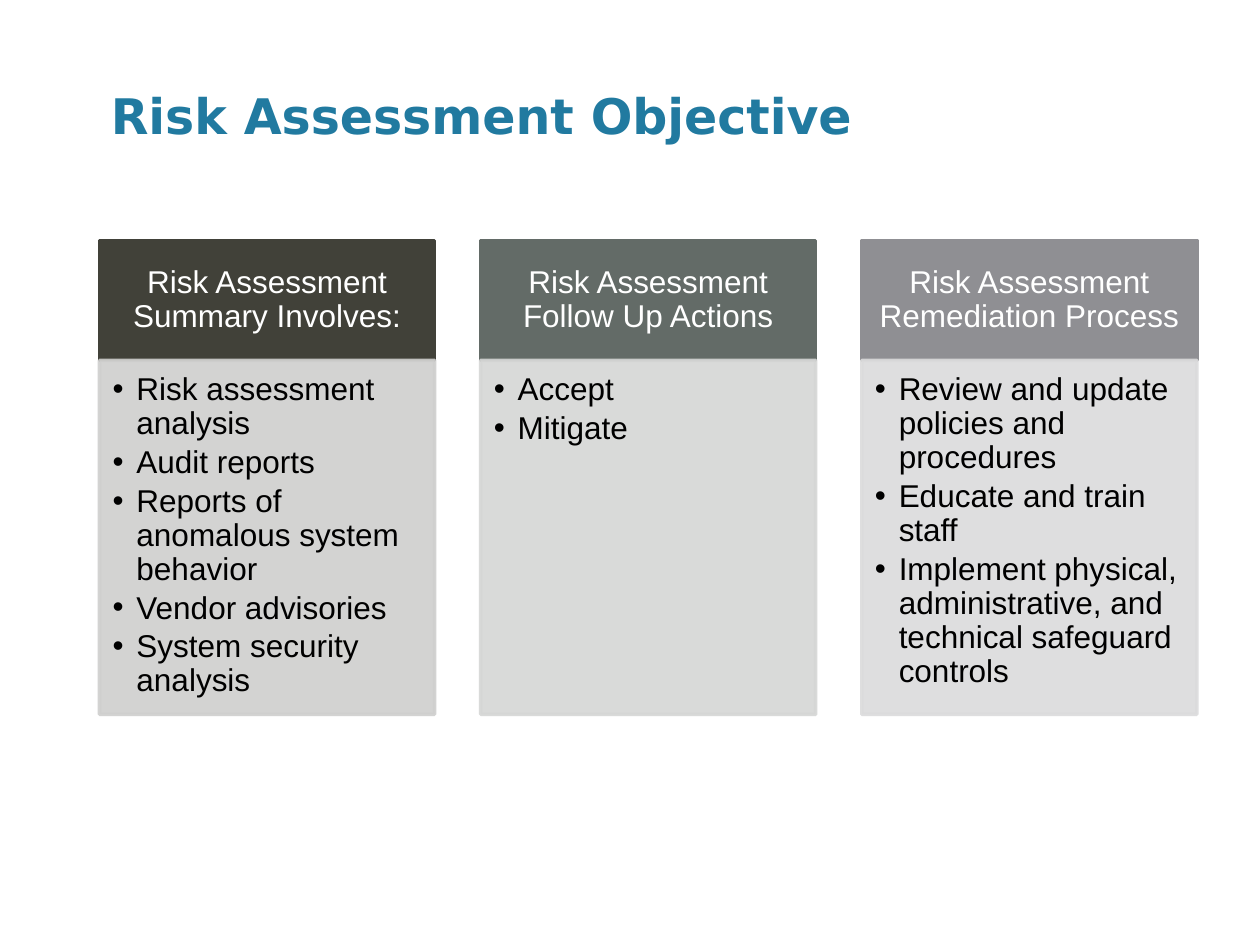
from dataclasses import dataclass

from lxml import etree
from pptx import Presentation
from pptx.dml.color import RGBColor as RGB
from pptx.enum.shapes import MSO_SHAPE as Shape
from pptx.enum.text import MSO_ANCHOR as Anchor, PP_ALIGN as Align
from pptx.oxml.ns import qn
from pptx.util import Pt

# Content: heading, heading colour, body colour, bullets
TITLE = "Risk Assessment Objective"
COLUMNS = [
    ("Risk Assessment Summary Involves:", "414139", "CFCFCE",
     ["Risk assessment analysis", "Audit reports",
      "Reports of anomalous system behavior", "Vendor advisories",
      "System security analysis"]),
    ("Risk Assessment Follow Up Actions", "636B67", "D5D6D5",
     ["Accept", "Mitigate"]),
    ("Risk Assessment Remediation Process", "8F8F93", "DBDBDC",
     ["Review and update policies and procedures", "Educate and train staff",
      "Implement physical, administrative, and technical safeguard controls"]),
]


@dataclass(frozen=True)
class Theme:
    title_font: str = "DejaVu Sans"
    body_font: str = "Arial"
    title_size: float = 28
    body_size: float = 18
    title: str = "217AA0"
    heading: str = "FFFFFF"
    body: str = "000000"
    line_width: float = 2
    body_opacity: int = 90


THEME = Theme()

# Layout in points
LEFT, TOP, WIDTH, PITCH = 56.88, 137.5, 191.5, 217.8
HEAD_H, BODY_H = 68.4, 202.3
INDENT = 13.6


def set_insets(tf, left, top, right, bottom):
    tf.margin_left, tf.margin_top = Pt(left), Pt(top)
    tf.margin_right, tf.margin_bottom = Pt(right), Pt(bottom)


def add_run(p, text, font, size, color, bold=False):
    r = p.add_run()
    r.text = text
    r.font.name, r.font.size, r.font.bold = font, Pt(size), bold
    r.font.color.rgb = RGB.from_string(color)


def add_panel(slide, x, y, height, color, opacity=100):
    sp = slide.shapes.add_shape(Shape.RECTANGLE, Pt(x), Pt(y), Pt(WIDTH), Pt(height))
    sp.shadow.inherit = False
    sp.line.width = Pt(THEME.line_width)
    for fill in (sp.fill, sp.line.fill):
        fill.solid()
        fill.fore_color.rgb = RGB.from_string(color)
    if opacity < 100:
        for clr in sp._element.spPr.iter(qn("a:srgbClr")):
            etree.SubElement(clr, qn("a:alpha"), val=str(opacity * 1000))
    sp.text_frame.word_wrap = True
    return sp.text_frame


def add_bullet(p):
    pPr = p._p.get_or_add_pPr()
    pPr.set("marL", str(Pt(INDENT)))
    pPr.set("indent", str(-Pt(INDENT)))
    etree.SubElement(pPr, qn("a:buFont"), typeface=THEME.body_font)
    etree.SubElement(pPr, qn("a:buChar"), char="•")


prs = Presentation()
prs.slide_width, prs.slide_height = Pt(720), Pt(540)
slide = prs.slides.add_slide(prs.slide_layouts[6])

# Title
tf = slide.shapes.add_textbox(Pt(56.2), Pt(45.4), Pt(627.8), Pt(63.4)).text_frame
tf.word_wrap = True
add_run(tf.paragraphs[0], TITLE, THEME.title_font, THEME.title_size, THEME.title, True)

# Columns
for i, (heading, head_color, body_color, bullets) in enumerate(COLUMNS):
    x = LEFT + i * PITCH

    # Heading panel
    tf = add_panel(slide, x, TOP, HEAD_H, head_color)
    set_insets(tf, 10.1, 5.8, 10.1, 5.8)
    tf.vertical_anchor = Anchor.MIDDLE
    p = tf.paragraphs[0]
    p.alignment, p.line_spacing = Align.CENTER, 0.9
    add_run(p, heading, THEME.body_font, THEME.body_size, THEME.heading)

    # Bullet panel
    tf = add_panel(slide, x, TOP + HEAD_H, BODY_H, body_color, THEME.body_opacity)
    set_insets(tf, 7.5, 7.5, 10.1, 11.3)
    tf.vertical_anchor = Anchor.TOP
    for n, text in enumerate(bullets):
        p = tf.add_paragraph() if n else tf.paragraphs[0]
        add_bullet(p)
        p.alignment, p.line_spacing, p.space_after = Align.LEFT, 0.9, Pt(2.7)
        add_run(p, text, THEME.body_font, THEME.body_size, THEME.body)

prs.save("out.pptx")
